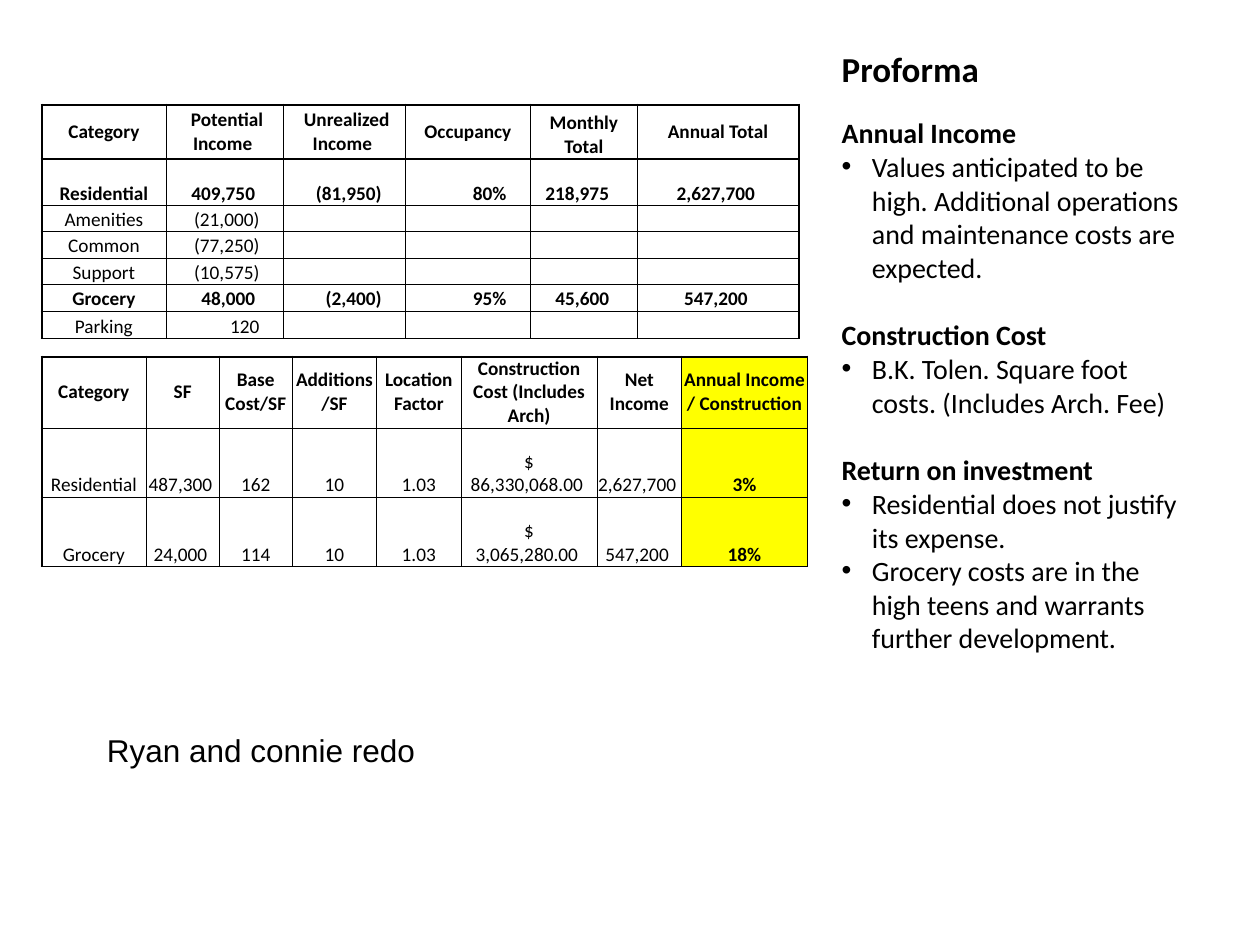
from lxml import etree
from pptx import Presentation
from pptx.dml.color import RGBColor
from pptx.enum.text import MSO_ANCHOR, MSO_AUTO_SIZE, PP_ALIGN
from pptx.oxml.ns import qn
from pptx.util import Inches, Pt

BLACK = RGBColor(0x00, 0x00, 0x00)
YELLOW = RGBColor(0xFF, 0xFF, 0x00)
LEFT, CENTER, RIGHT = PP_ALIGN.LEFT, PP_ALIGN.CENTER, PP_ALIGN.RIGHT
TOP, MIDDLE, BOTTOM = MSO_ANCHOR.TOP, MSO_ANCHOR.MIDDLE, MSO_ANCHOR.BOTTOM
NO_FIT = MSO_AUTO_SIZE.NONE

SIDE_LEFT, SIDE_WIDTH = 6.58, 2.92
TABLE_LEFT = 0.33
CELL_SIZE = 11
BULLET_INDENT = 0.24
THICK, THIN = 1.25, 0.5

INCOME_COLUMNS = [0.99, 0.93, 0.97, 0.99, 0.85, 1.28]
INCOME_HEIGHTS = [0.43, 0.37, 0.21, 0.21, 0.21, 0.21, 0.22]
INCOME = [
    ["Category", " Potential Income ", " Unrealized Income ", " Occupancy ",
     "Monthly Total", " Annual Total "],
    ["Residential", "409,750 ", "(81,950)", "80%", "218,975 ", "2,627,700 "],
    ["Amenities", "(21,000)", "", "", "", ""],
    ["Common", "(77,250)", "", "", "", ""],
    ["Support", "(10,575)", "", "", "", ""],
    ["Grocery", "48,000 ", "(2,400)", "95%", "45,600 ", "547,200 "],
    ["Parking", "120", "", "", "", ""],
]

COST_COLUMNS = [0.83, 0.58, 0.58, 0.67, 0.67, 1.08, 0.67, 1]
COST_HEIGHTS = [0.55] * 3
COST = [
    ["Category", "SF", "Base Cost/SF", "Additions /SF", "Location Factor",
     "Construction Cost (Includes Arch)", "Net Income", "Annual Income\n/ Construction"],
    ["Residential", "487,300 ", "162", "10", "1.03", "$\n86,330,068.00 ", "2,627,700 ", "3%"],
    ["Grocery", "24,000 ", "114", "10", "1.03", "$\n3,065,280.00 ", "547,200 ", "18%"],
]

FINDINGS = [
    ("Annual Income",
     ["Values anticipated to be high. Additional operations and maintenance costs are expected."]),
    ("Construction Cost",
     ["B.K. Tolen. Square foot costs. (Includes Arch. Fee)"]),
    ("Return on investment",
     ["Residential does not justify its expense.",
      "Grocery costs are in the high teens and warrants further development."]),
]


def write(paragraph, text, size=16, font="Calibri", bold=False, align=LEFT, before=0):
    """Put formatted text into a paragraph."""
    paragraph.alignment = align
    paragraph.space_before = Pt(before)
    if text:
        run = paragraph.add_run()
        run.text = text
        run.font.size, run.font.name, run.font.bold = Pt(size), font, bold
        run.font.color.rgb = BLACK
    else:
        etree.SubElement(paragraph._p, qn("a:endParaRPr"), sz=str(size * 100))


def set_bullet(paragraph, bulleted):
    """Turn the bullet of a paragraph on or off."""
    properties = paragraph._p.get_or_add_pPr()
    indent = Inches(BULLET_INDENT) if bulleted else 0
    properties.set("marL", str(indent))
    properties.set("indent", str(-indent))
    if bulleted:
        etree.SubElement(properties, qn("a:buFont"), typeface="Arial")
        etree.SubElement(properties, qn("a:buChar"), char="•")
    else:
        etree.SubElement(properties, qn("a:buNone"))


def place(shape, left, top, width, height):
    """Position a text shape and return its wrapped, top-anchored frame."""
    shape.left, shape.top = Inches(left), Inches(top)
    shape.width, shape.height = Inches(width), Inches(height)
    frame = shape.text_frame
    frame.word_wrap, frame.auto_size, frame.vertical_anchor = True, NO_FIT, TOP
    return frame


def add_findings(body):
    """Fill the body with headings and their bulleted points."""
    frame = place(body, SIDE_LEFT, 0.87, SIDE_WIDTH, 4.37)
    for index, (heading, points) in enumerate(FINDINGS):
        paragraph = frame.add_paragraph() if index else frame.paragraphs[0]
        write(paragraph, heading, bold=True, before=19.5 if index else 0)
        set_bullet(paragraph, False)
        for point in points:
            paragraph = frame.add_paragraph()
            write(paragraph, point)
            set_bullet(paragraph, True)


def set_borders(cell, widths):
    """Draw the four borders of a cell in black, with widths keyed by side."""
    properties = cell._tc.get_or_add_tcPr()
    for side, width in widths.items():
        line = etree.SubElement(properties, qn(f"a:ln{side}"), w=str(Pt(width)))
        fill = etree.SubElement(line, qn("a:solidFill"))
        etree.SubElement(fill, qn("a:srgbClr"), val=str(BLACK))


def add_grid(slide, top, columns, heights, rows, thick_columns, thick_rows,
             is_bold, right_columns=(), highlight=None):
    """Add a table whose listed grid lines are thick and the others thin."""
    grid = slide.shapes.add_table(
        len(rows), len(columns), Inches(TABLE_LEFT), Inches(top),
        Inches(sum(columns)), Inches(sum(heights))).table
    grid.first_row = grid.horz_banding = False
    for column, width in zip(grid.columns, columns):
        column.width = Inches(width)
    for row, height in zip(grid.rows, heights):
        row.height = Inches(height)

    for r, texts in enumerate(rows):
        for c, text in enumerate(texts):
            cell = grid.cell(r, c)
            to_right = r > 0 and c in right_columns
            cell.margin_left = cell.margin_top = cell.margin_bottom = 0
            cell.margin_right = Inches(0.19 if to_right else 0)
            cell.vertical_anchor = BOTTOM if r or text == "Monthly Total" else MIDDLE
            for index, line in enumerate(text.split("\n")):
                frame = cell.text_frame
                paragraph = frame.add_paragraph() if index else frame.paragraphs[0]
                write(paragraph, line, size=CELL_SIZE, bold=is_bold(r, c),
                      align=RIGHT if to_right else CENTER)
            set_borders(cell, {
                "L": THICK if c in thick_columns else THIN,
                "R": THICK if c + 1 in thick_columns else THIN,
                "T": THICK if r in thick_rows else THIN,
                "B": THICK if r + 1 in thick_rows else THIN})
            if c == highlight:
                cell.fill.solid()
                cell.fill.fore_color.rgb = YELLOW
            else:
                cell.fill.background()


def main():
    """Build the proforma slide."""
    deck = Presentation()
    deck.slide_width, deck.slide_height = Inches(10), Inches(7.5)
    slide = deck.slides.add_slide(deck.slide_layouts[1])

    title = place(slide.shapes.title, SIDE_LEFT, 0.33, SIDE_WIDTH, 0.44)
    write(title.paragraphs[0], "Proforma", size=20, bold=True)
    add_findings(slide.placeholders[1])

    add_grid(slide, 0.83, INCOME_COLUMNS, INCOME_HEIGHTS, INCOME,
             thick_columns={0, 6}, thick_rows={0, 1},
             is_bold=lambda r, c: r in (0, 1, 5), right_columns=range(1, 5))
    add_grid(slide, 2.83, COST_COLUMNS, COST_HEIGHTS, COST,
             thick_columns={0, 8}, thick_rows={0, 3},
             is_bold=lambda r, c: r == 0 or c == 7, highlight=7)

    note = place(slide.shapes.add_textbox(0, 0, 0, 0), 0.75, 5.75, 4.92, 0.4)
    write(note.paragraphs[0], "Ryan and connie redo", size=18, font="Arial", before=9)
    deck.save("out.pptx")


if __name__ == "__main__":
    main()
